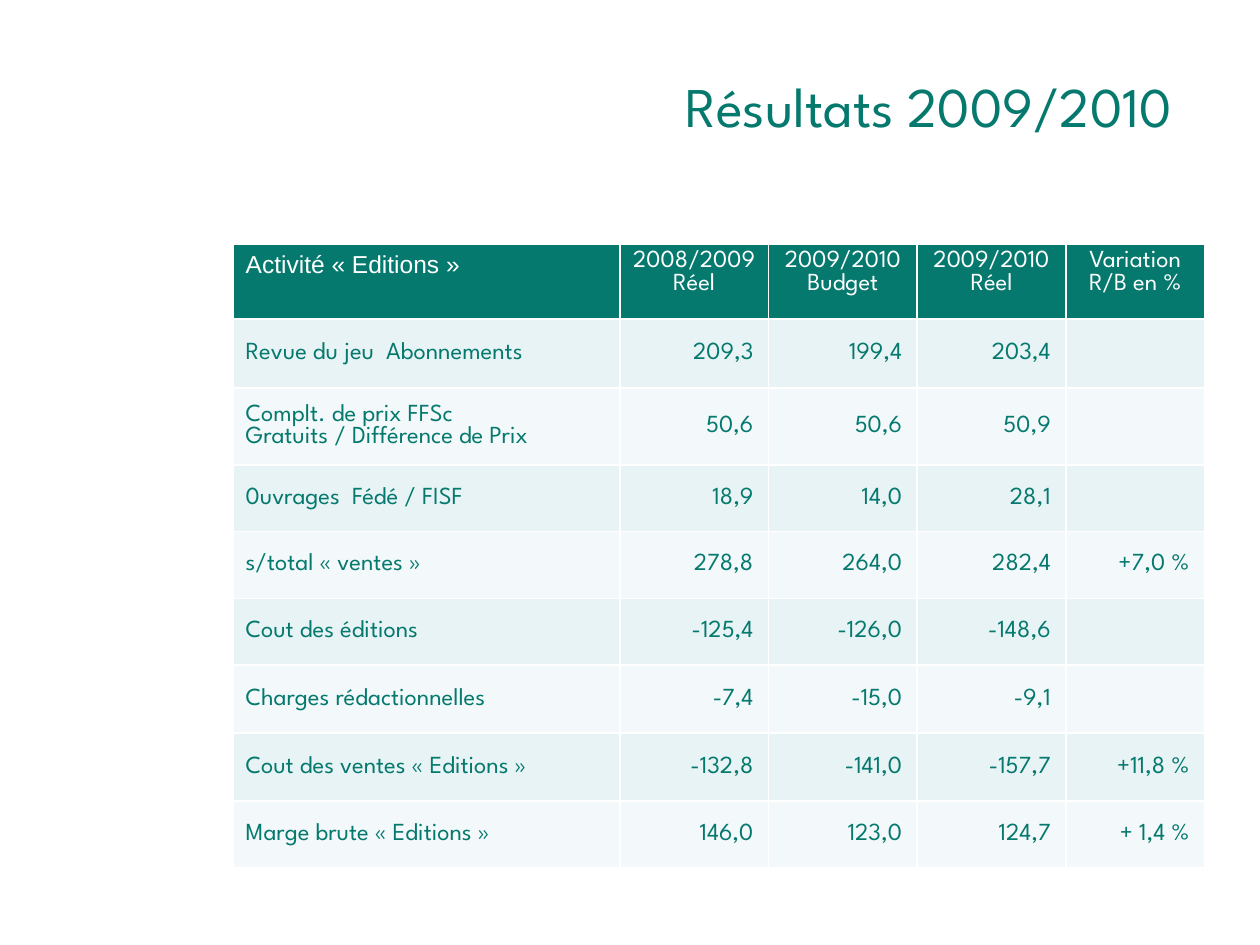
from dataclasses import dataclass

from pptx import Presentation
from pptx.dml.color import RGBColor
from pptx.enum.text import MSO_ANCHOR, PP_ALIGN
from pptx.util import Inches, Pt

LEFT, CENTER, RIGHT = PP_ALIGN.LEFT, PP_ALIGN.CENTER, PP_ALIGN.RIGHT
TOP, MIDDLE = MSO_ANCHOR.TOP, MSO_ANCHOR.MIDDLE
TITLE_ONLY = 5

TEAL = RGBColor(0x05, 0x79, 0x6E)
WHITE = RGBColor(0xFF, 0xFF, 0xFF)
BAND_DARK = RGBColor(0xE7, 0xF3, 0xF4)
BAND_LIGHT = RGBColor(0xF3, 0xF9, 0xFA)
FONT = "League Spartan"
HEADER_LABEL_FONT = "Arial"


@dataclass
class ResultRow:
    label: str
    values: tuple[str, str, str]
    variation: str
    height: float

    def texts(self) -> list[str]:
        return [self.label, *self.values, self.variation]


@dataclass
class CellStyle:
    fill: RGBColor
    color: RGBColor
    alignment: PP_ALIGN
    anchor: MSO_ANCHOR
    font: str = FONT
    margin_right: float = 0.1


COLUMN_WIDTHS = [3.07, 1.18, 1.18, 1.18, 1.1]
HEADER_HEIGHT = 0.59
HEADERS = ["Activité « Editions »", "2008/2009\nRéel", "2009/2010\nBudget",
           "2009/2010\nRéel", "Variation\nR/B en %"]
ROWS = [
    ResultRow("Revue du jeu  Abonnements", ("209,3", "199,4", "203,4"), "", 0.55),
    ResultRow("Complt. de prix FFSc\nGratuits / Différence de Prix",
              ("50,6", "50,6", "50,9"), "", 0.61),
    ResultRow("0uvrages  Fédé / FISF", ("18,9", "14,0", "28,1"), "", 0.53),
    ResultRow("s/total « ventes »", ("278,8", "264,0", "282,4"), "+7,0 %", 0.53),
    ResultRow("Cout des éditions", ("-125,4", "-126,0", "-148,6"), "", 0.53),
    ResultRow("Charges rédactionnelles", ("-7,4", "-15,0", "-9,1"), "", 0.54),
    ResultRow("Cout des ventes « Editions »",
              ("-132,8", "-141,0", "-157,7"), "+11,8 %", 0.54),
    ResultRow("Marge brute « Editions »",
              ("146,0", "123,0", "124,7"), "+ 1,4 %", 0.53),
]


def add_title(slide, text: str) -> None:
    title = slide.shapes.title
    title.left, title.top = Inches(0), Inches(0.52)
    title.width, title.height = Inches(9.41), Inches(0.63)
    title.text_frame.text = text
    title.text_frame.vertical_anchor = MIDDLE
    paragraph = title.text_frame.paragraphs[0]
    paragraph.alignment = RIGHT
    paragraph.font.name = FONT
    paragraph.font.size = Pt(32)
    paragraph.font.color.rgb = TEAL


def fill_cell(cell, text: str, style: CellStyle) -> None:
    cell.fill.solid()
    cell.fill.fore_color.rgb = style.fill
    cell.vertical_anchor = style.anchor
    cell.margin_right = Inches(style.margin_right)
    cell.text = text
    for paragraph in cell.text_frame.paragraphs:
        paragraph.alignment = style.alignment
        paragraph.font.name = style.font
        paragraph.font.size = Pt(14)
        paragraph.font.bold = False
        paragraph.font.color.rgb = style.color


def add_results_table(slide) -> None:
    heights = [HEADER_HEIGHT] + [row.height for row in ROWS]
    frame = slide.shapes.add_table(
        len(heights), len(COLUMN_WIDTHS), Inches(1.85), Inches(1.94),
        Inches(sum(COLUMN_WIDTHS)), Inches(sum(heights)))
    table = frame.table
    for column, width in zip(table.columns, COLUMN_WIDTHS):
        column.width = Inches(width)
    for table_row, height in zip(table.rows, heights):
        table_row.height = Inches(height)

    # Header row
    label_style = CellStyle(TEAL, WHITE, LEFT, TOP, HEADER_LABEL_FONT)
    period_style = CellStyle(TEAL, WHITE, CENTER, TOP)
    for column, text in enumerate(HEADERS):
        fill_cell(table.cell(0, column), text,
                  period_style if column else label_style)

    # Result rows in alternating bands
    for index, row in enumerate(ROWS, start=1):
        band = BAND_DARK if index % 2 else BAND_LIGHT
        label_style = CellStyle(band, TEAL, LEFT, MIDDLE)
        value_style = CellStyle(band, TEAL, RIGHT, MIDDLE, margin_right=0.12)
        for column, text in enumerate(row.texts()):
            fill_cell(table.cell(index, column), text,
                      value_style if column else label_style)


def main() -> None:
    presentation = Presentation()
    presentation.slide_width = Inches(10)
    presentation.slide_height = Inches(7.5)
    slide = presentation.slides.add_slide(presentation.slide_layouts[TITLE_ONLY])
    add_title(slide, "Résultats 2009/2010")
    add_results_table(slide)
    presentation.save("out.pptx")


if __name__ == "__main__":
    main()
